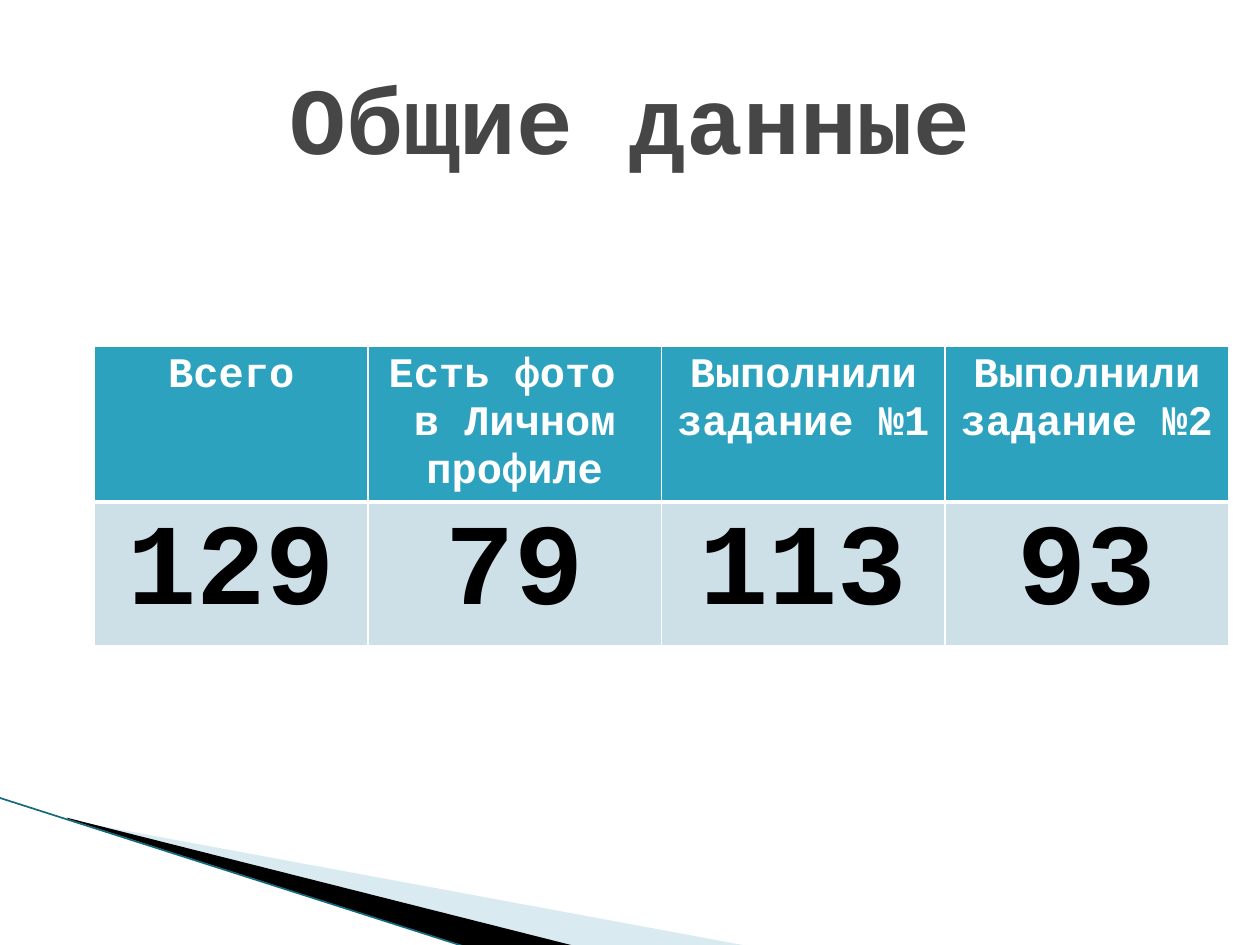
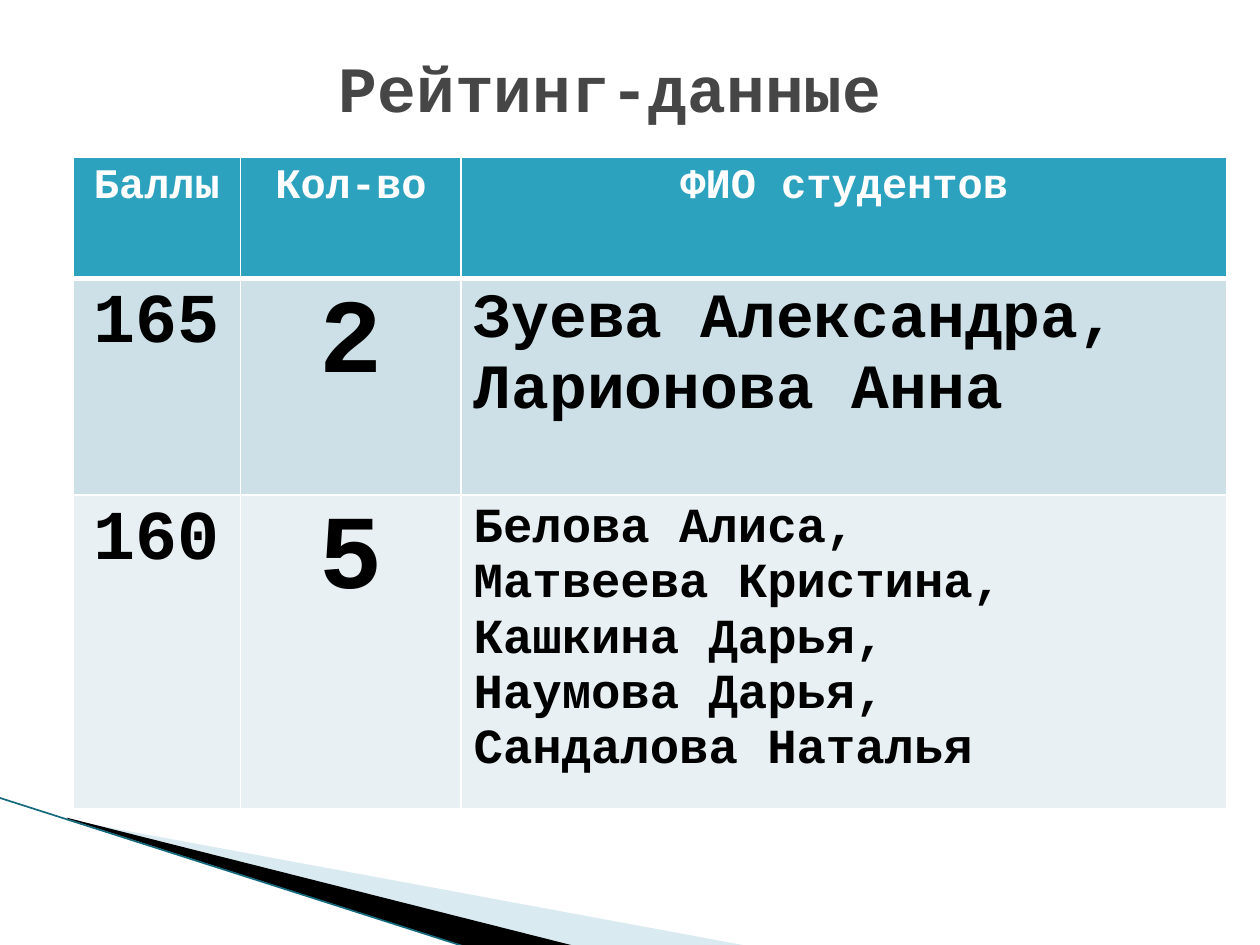
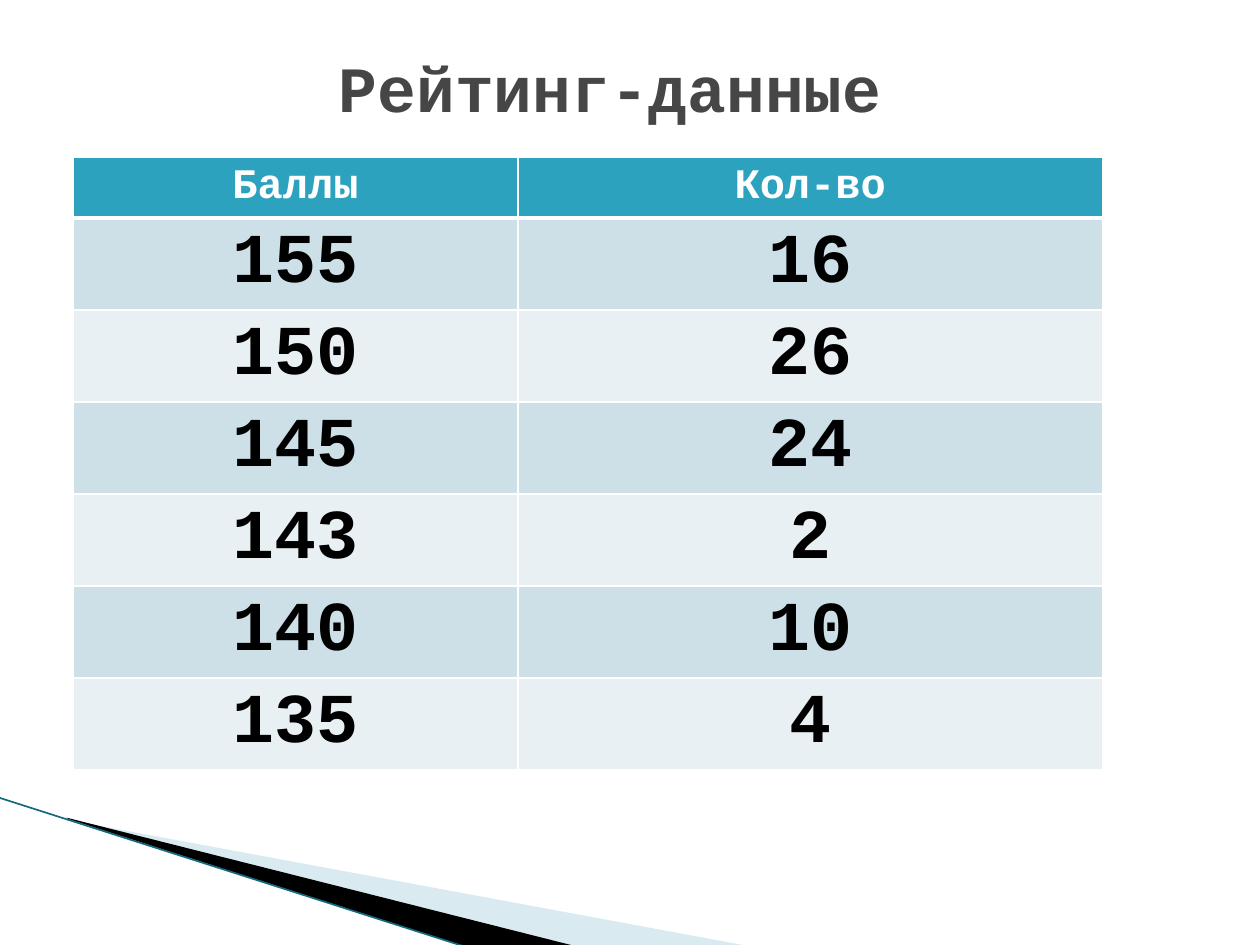
from dataclasses import dataclass

from lxml import etree
from pptx import Presentation
from pptx.dml.color import RGBColor
from pptx.enum.shapes import MSO_CONNECTOR
from pptx.enum.text import MSO_ANCHOR, PP_ALIGN
from pptx.oxml.ns import qn
from pptx.util import Inches, Pt

LEFT, MID = PP_ALIGN.LEFT, PP_ALIGN.CENTER
CELL = Inches(0.01)  # the slide is a grid of 1000 by 750 cells
COLS, ROWS = 1000, 750


@dataclass(frozen=True)
class Theme:
    face: str = "Courier New"
    title: str = "464646"
    head: str = "2DA2BF"
    bands: tuple = ("CDE0E8", "E8F0F4")
    white: str = "FFFFFF"
    ink: str = "000000"
    sweep: str = "A0CBDC"
    edge: str = "14697D"
    big: float = 54
    mid: float = 36.9
    label: float = 24
    thin: float = 1
    thick: float = 3


T = Theme()


def rgb(code):
    return RGBColor.from_string(code)


def cells(*counts):
    return [round(n * CELL) for n in counts]


def put_text(frame, text, size, color, align=MID):
    frame.text = text
    for para in frame.paragraphs:
        para.alignment = align
        for run in para.runs:
            font = run.font
            font.name, font.size, font.bold = T.face, Pt(size), True
            font.color.rgb = rgb(color)


def add_title(slide, box, text, size):
    frame = slide.shapes.add_textbox(*cells(*box)).text_frame
    frame.word_wrap = True
    frame.vertical_anchor = MSO_ANCHOR.MIDDLE
    put_text(frame, text, size, T.title)


def add_wedge(slide, points, color, alpha=None):
    first, *rest = [cells(*point) for point in points]
    path = slide.shapes.build_freeform(*first)
    path.add_line_segments(rest, close=True)
    wedge = path.convert_to_shape()
    wedge.shadow.inherit = False
    wedge.line.fill.background()
    wedge.fill.solid()
    wedge.fill.fore_color.rgb = rgb(color)
    if alpha:
        tone = wedge.fill._xPr.find(f".//{qn('a:srgbClr')}")
        etree.SubElement(tone, qn("a:alpha"), val=str(alpha * 1000))


def add_sweep(slide, left, top):
    """Draw the corner wedges and the edge line from one corner point."""
    def shift(*points):
        return [(left + x, top + y) for x, y in points]

    add_wedge(slide, shift((55, 18), (595, 118), (456, 118), (55, 17)),
              T.sweep, 40)
    add_wedge(slide, shift((53, 16), (457, 118), (372, 119), (54, 17)), T.ink)
    start, end = shift((-1, 0), (371, 119))
    edge = slide.shapes.add_connector(
        MSO_CONNECTOR.STRAIGHT, *cells(*start, *end))
    edge.line.color.rgb = rgb(T.edge)
    edge.line.width = Pt(0.95)
    etree.SubElement(edge._element.spPr, qn("a:effectLst"))


def add_rules(cell, row):
    """Border a cell, with a thick rule between the head and the body."""
    props = cell._tc.get_or_add_tcPr()
    heavy = {0: "B", 1: "T"}.get(row)
    for spot, side in enumerate("LRTB"):
        width = T.thick if side == heavy else T.thin
        rule = etree.Element(qn(f"a:ln{side}"), w=str(Pt(width)))
        fill = etree.SubElement(rule, qn("a:solidFill"))
        etree.SubElement(fill, qn("a:srgbClr"), val=T.white)
        props.insert(spot, rule)


def add_grid(slide, left, top, widths, rows, names=None):
    """Add a table; a row is (height, texts, sizes), names is a left column."""
    box = cells(left, top, sum(widths), sum(row[0] for row in rows))
    table = slide.shapes.add_table(len(rows), len(widths), *box).table
    for col, width in zip(table.columns, cells(*widths)):
        col.width = width
    for r, (height, texts, sizes) in enumerate(rows):
        table.rows[r].height = cells(height)[0]
        for c, (text, size) in enumerate(zip(texts, sizes)):
            cell = table.cell(r, c)
            align = LEFT if r and c == names else MID
            put_text(cell.text_frame, text, size,
                     T.ink if r else T.white, align)
            cell.fill.solid()
            cell.fill.fore_color.rgb = rgb(
                T.bands[(r - 1) % 2] if r else T.head)
            add_rules(cell, r)


def add_page(deck, title, size, depth, *grid):
    """Add a slide with the sweep, one table and a title of given depth."""
    slide = deck.slides.add_slide(deck.slide_layouts[6])
    add_sweep(slide, 0, 633)
    add_grid(slide, *grid)
    add_title(slide, (50, 30, COLS - 100, depth), title, size)


def head(height, *texts):
    return height, texts, [T.label] * len(texts)


def main():
    deck = Presentation()
    deck.slide_width, deck.slide_height = cells(COLS, ROWS)

    totals = [
        head(123, "Всего", "Есть фото \nв Личном профиле",
             "Выполнили задание №1", "Выполнили задание №2"),
        (114, ("129", "79", "113", "93"), [66] * 4),
    ]
    add_page(deck, "Общие данные", T.big, 125,
             75, 275, (217, 233, 225, 225), totals)

    rating = "Рейтинг-данные "
    leaders = [
        head(96, "Баллы", "Кол-во", "ФИО студентов"),
        (172, ("165", "2", "Зуева Александра,\nЛарионова Анна"),
         (40, 60, 36)),
        (249, ("160", "5", "Белова Алиса,\nМатвеева Кристина,\n"
               "Кашкина Дарья,\nНаумова Дарья,\nСандалова Наталья"),
         (40, 60, 28)),
    ]
    add_page(deck, rating, T.mid, 78, 58, 125, (133, 175, 608), leaders, 2)

    scores = {155: 16, 150: 26, 145: 24, 143: 2, 140: 10, 135: 4}
    counts = [head(48, "Баллы", "Кол-во")]
    counts += [(73, (str(score), str(count)), (40, 40))
               for score, count in scores.items()]
    add_page(deck, rating, T.mid, 78, 58, 125, (353, 464), counts)

    deck.save("out.pptx")


if __name__ == "__main__":
    main()
